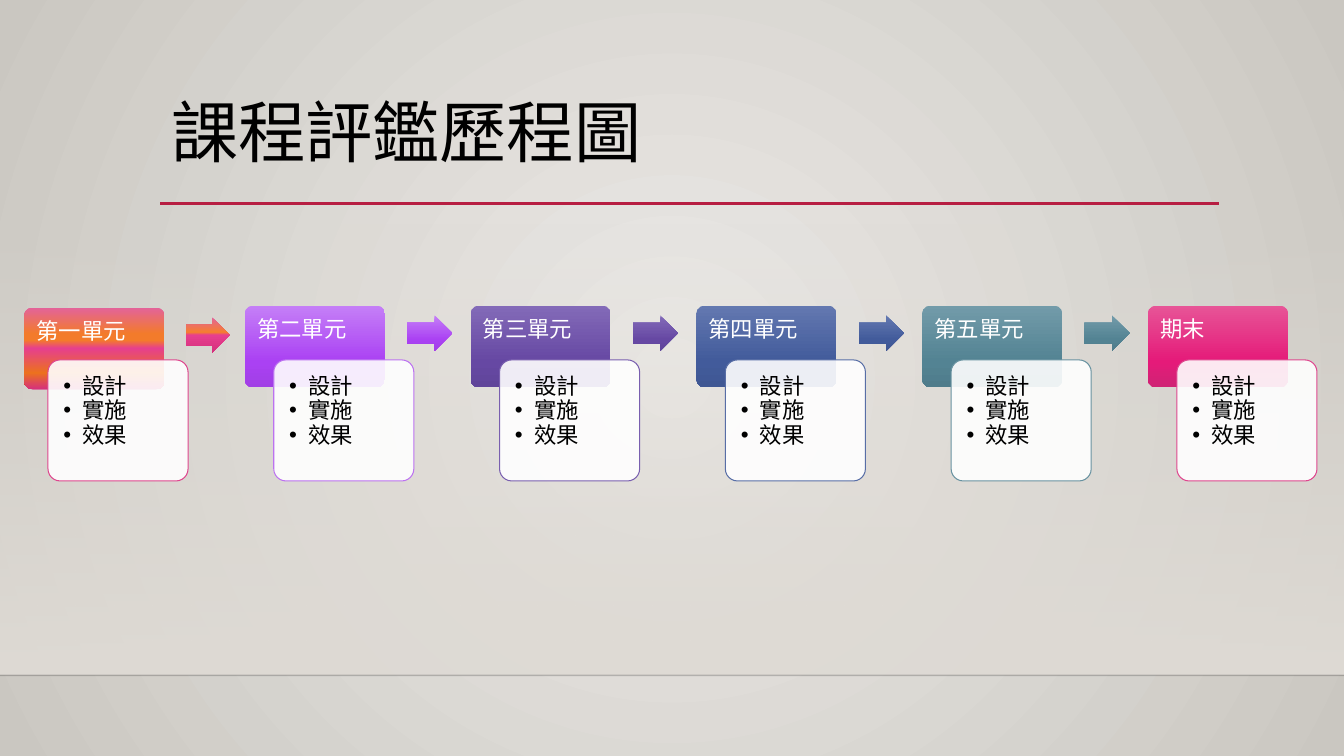
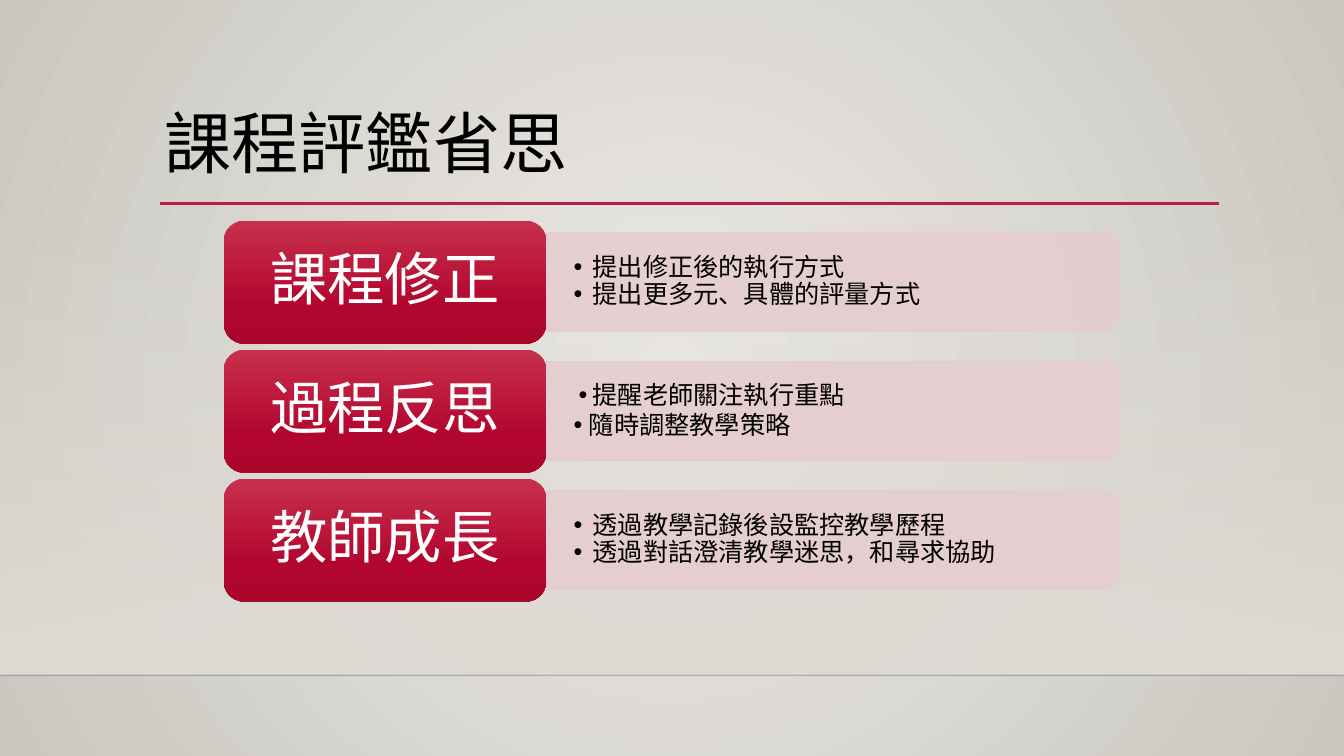
from dataclasses import dataclass
from lxml.etree import SubElement
from pptx import Presentation
from pptx.dml.color import RGBColor
from pptx.enum.shapes import MSO_CONNECTOR as Connector, MSO_SHAPE as Preset
from pptx.enum.text import MSO_ANCHOR as Anchor, MSO_AUTO_SIZE as AutoSize, PP_ALIGN as Align
from pptx.oxml.ns import qn
from pptx.util import Cm, Pt


@dataclass(frozen=True)
class Theme:
    font: str = "Noto Sans CJK TC"
    ink: str = "000000"
    white: str = "FFFFFF"
    accent: str = "B71E42"
    floor: str = "000001"
    bar: str = "E6CDCF"
    backdrop: tuple = ((0, "ECEAE7"), (100, "CAC7C1"))
    wall: tuple = ((0, "DFDBD5", 0), (100, "DFDBD5"))
    block: tuple = ((0, "C7304C"), (69, "B3062F"), (100, "AA062C"))
    title_size: int = 48
    block_size: int = 41
    point_size: int = 18
    unit_size: int = 16


@dataclass(frozen=True)
class Unit:
    name: str
    stops: tuple
    edge: str
    font: str = "Cabin"
    arrow: tuple = ()
    nudge: tuple = (0, 0)


@dataclass(frozen=True)
class Point:
    text: str
    margin: float = 0.48
    hang: float = 0.48
    spacing: float = 0.9


def shade(top, middle, bottom):
    return (0, top), (69, middle), (100, bottom)


UNITS = (
    Unit("第一單元",
         ((0, "E3639B"), (32, "F37B2B"), (40, "F47B2A"), (50, "E63F8E"),
          (80, "EC711E"), (100, "D5307D")),
         "DE478E", "Arial",
         ((0, "E3639B"), (42, "F57E2F"), (50, "E63F8E"), (100, "D5307D")),
         (0.13, 0.05)),
    Unit("第二單元", shade("C57FF7", "AA41F3", "A13FE5"), "BC72F0"),
    Unit("第三單元", shade("836AB8", "6648A3", "60459A"), "795FAF"),
    Unit("第四單元", shade("6378B0", "425B9B", "3F5793"), "586EA6"),
    Unit("第五單元", shade("729BA9", "538393", "4F7C8B"), "6892A0"),
    Unit("期末", shade("E75597", "E51A79", "CF2374"), "DE478E"),
)
STAGES = (Point("設計"), Point("實施"), Point("效果"))
REFLECTIONS = (
    ("課程修正", (Point("提出修正後的執行方式"),
              Point("提出更多元、具體的評量方式"))),
    ("過程反思", (Point("提醒老師關注執行重點", hang=0.36),
              Point("隨時調整教學策略", 0.38, 0.38, 1.0))),
    ("教師成長", (Point("透過教學記錄後設監控教學歷程"),
              Point("透過對話澄清教學迷思，和尋求協助"))),
)


def fade(parent, percent):
    color = parent.find(".//" + qn("a:srgbClr"))
    SubElement(color, qn("a:alpha"), val=str(percent * 1000))


def blend(fill, owner, stops, radial=False):
    fill.gradient()
    gradient = owner.find(".//" + qn("a:gradFill"))
    for child in list(gradient):
        gradient.remove(child)
    stop_list = SubElement(gradient, qn("a:gsLst"))
    for position, color, *alpha in stops:
        stop = SubElement(stop_list, qn("a:gs"), pos=str(position * 1000))
        SubElement(stop, qn("a:srgbClr"), val=color)
        if alpha:
            fade(stop, alpha[0])
    if radial:
        circle = SubElement(gradient, qn("a:path"), path="circle")
        SubElement(circle, qn("a:fillToRect"), l="50000", t="50000", r="50000", b="50000")
    else:
        SubElement(gradient, qn("a:lin"), ang="5400000", scaled="0")


class Builder:
    def __init__(self, theme):
        self.theme = theme
        self.deck = Presentation()
        self.deck.slide_width, self.deck.slide_height = Cm(33.87), Cm(19.05)
        self.layout = self.deck.slide_layouts[5]
        self.page = None

    def add_page(self, title, left, top):
        first = self.page is None
        self.page = self.deck.slides.add_slide(self.layout)
        if first:
            self.dress_layout()
        box = self.page.shapes.title
        box.left, box.top, box.width, box.height = Cm(left), Cm(top), Cm(29.21), Cm(1.96)
        frame = self.prepare(box, Anchor.MIDDLE, (0.25, 0.13, 0.25, 0.13))
        self.put_text(frame.paragraphs[0], title, self.theme.title_size, self.theme.ink)

    def dress_layout(self):
        theme = self.theme
        blend(self.layout.background.fill, self.layout.element, theme.backdrop, True)
        wall = self.shape(Preset.RECTANGLE, 0, 5.61, 33.87, 11.4, stops=theme.wall)
        floor = self.line(0, 33.87, 17.02, theme.floor, 1)
        fade(floor.element.spPr, 20)
        rule = self.line(4.04, 30.73, 5.13, theme.accent, 2.5)
        for item in (wall, floor, rule):
            self.layout.shapes.element.append(item.element)

    def line(self, start, end, y, color, width):
        line = self.page.shapes.add_connector(
            Connector.STRAIGHT, Cm(start), Cm(y), Cm(end), Cm(y))
        line.line.color.rgb = RGBColor.from_string(color)
        line.line.width = Pt(width)
        SubElement(line.element.spPr, qn("a:effectLst"))
        return line

    def shape(self, preset, left, top, width, height, stops=(), color=None, edge=None,
              adjust=()):
        shape = self.page.shapes.add_shape(preset, Cm(left), Cm(top), Cm(width), Cm(height))
        shape.shadow.inherit = False
        for index, value in enumerate(adjust):
            shape.adjustments[index] = value
        if stops:
            blend(shape.fill, shape.element, stops)
        else:
            shape.fill.solid()
            shape.fill.fore_color.rgb = RGBColor.from_string(color)
            fade(shape.element.spPr, 90)
        if edge:
            shape.line.color.rgb = RGBColor.from_string(edge)
            shape.line.width = Pt(0.75)
        else:
            shape.line.fill.background()
        return shape

    def prepare(self, box, anchor, insets):
        frame = box.text_frame
        frame.word_wrap = True
        frame.auto_size = AutoSize.NONE
        frame.vertical_anchor = anchor
        (frame.margin_left, frame.margin_top,
         frame.margin_right, frame.margin_bottom) = map(Cm, insets)
        return frame

    def put_text(self, para, text, size, color, align=Align.LEFT, font=None, spacing=0.9):
        para.text = text
        para.alignment = align
        para.line_spacing = spacing
        para.font.size = Pt(size)
        para.font.color.rgb = RGBColor.from_string(color)
        para.font.name = font or self.theme.font
        style = para._p.get_or_add_pPr().find(qn("a:defRPr"))
        SubElement(style, qn("a:ea"), typeface=self.theme.font)

    def bullets(self, frame, points, size, font=None):
        for index, point in enumerate(points):
            para = frame.add_paragraph() if index else frame.paragraphs[0]
            settings = para._p.get_or_add_pPr()
            settings.set("marL", str(Cm(point.margin)))
            settings.set("indent", str(-Cm(point.hang)))
            SubElement(settings, qn("a:buFont"), typeface="Arial")
            SubElement(settings, qn("a:buChar"), char="•")
            self.put_text(para, point.text, size, self.theme.ink, font=font,
                          spacing=point.spacing)

    def unit(self, unit, left, top, has_next):
        theme = self.theme
        shift_x, shift_y = unit.nudge
        head = self.shape(Preset.ROUNDED_RECTANGLE, left + shift_x, top + shift_y, 3.53, 2.06,
                          stops=unit.stops, adjust=(0.1,))
        frame = self.prepare(head, Anchor.TOP, (0.25, 0.25, 0.25, 0.12))
        self.put_text(frame.paragraphs[0], unit.name, theme.unit_size, theme.white)
        card = self.shape(Preset.ROUNDED_RECTANGLE, left + 0.73, top + 1.37, 3.53, 3.05,
                          color=theme.white, edge=unit.edge, adjust=(0.1,))
        frame = self.prepare(card, Anchor.TOP, (0.3, 0.3, 0.3, 0.3))
        self.bullets(frame, STAGES, theme.unit_size, unit.font)
        if has_next:
            self.shape(Preset.RIGHT_ARROW, left + 4.09 + shift_x, top + 0.25 + shift_y,
                       1.14 - shift_y, 0.89, stops=unit.arrow or unit.stops,
                       adjust=(0.6, 0.5))

    def reflection(self, name, points, left, top):
        theme = self.theme
        length, depth = 14.45, 2.49
        offset = (length - depth) / 2
        bar = self.shape(Preset.ROUND_2_SAME_RECTANGLE, left + 8.13 + offset,
                         top + 0.3 - offset, depth, length, color=theme.bar, edge=theme.bar)
        bar.rotation = 90
        fade(bar.element.spPr.find(qn("a:ln")), 90)
        box = self.page.shapes.add_textbox(Cm(left + 8.13), Cm(top + 0.43), Cm(14.33), Cm(2.24))
        frame = self.prepare(box, Anchor.MIDDLE, (0.69, 0.36, 0.69, 0.36))
        self.bullets(frame, points, theme.point_size)
        block = self.shape(Preset.ROUNDED_RECTANGLE, left, top, 8.13, 3.1, stops=theme.block)
        frame = self.prepare(block, Anchor.MIDDLE, (0.43, 0.23, 0.43, 0.23))
        self.put_text(frame.paragraphs[0], name, theme.block_size, theme.white, Align.CENTER)


def main():
    builder = Builder(Theme())
    builder.add_page("課程評鑑歷程圖", 4.06, 2.44)
    for index, unit in enumerate(UNITS):
        builder.unit(unit, 0.48 + index * 5.69, 7.7, index < len(UNITS) - 1)
    builder.add_page("課程評鑑省思", 3.89, 2.72)
    for index, (name, points) in enumerate(REFLECTIONS):
        builder.reflection(name, points, 5.64, 5.56 + index * 3.25)
    builder.deck.save("out.pptx")


if __name__ == "__main__":
    main()
